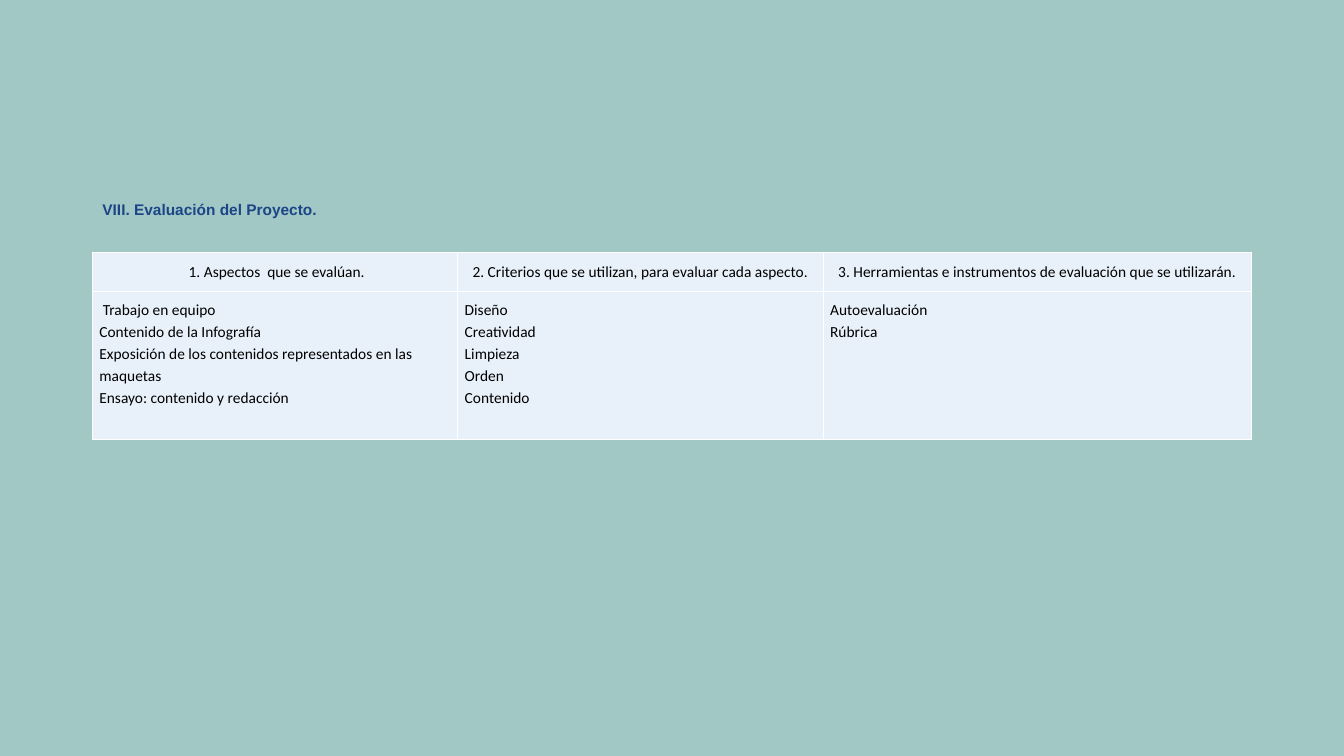
from pptx import Presentation
from pptx.dml.color import RGBColor
from pptx.enum.text import MSO_ANCHOR, PP_ALIGN
from pptx.oxml import parse_xml
from pptx.oxml.ns import nsdecls
from pptx.util import Pt


def color(value):
    return RGBColor.from_string(value)


def format_paragraph(paragraph, paragraph_format, font_format, font_color):
    for name, value in paragraph_format.items():
        setattr(paragraph, name, value)
    for name, value in font_format.items():
        setattr(paragraph.font, name, value)
    paragraph.font.color.rgb = color(font_color)


presentation = Presentation()
presentation.slide_width = Pt(960)
presentation.slide_height = Pt(540)
slide = presentation.slides.add_slide(presentation.slide_layouts[5])
slide.background.fill.solid()
slide.background.fill.fore_color.rgb = color("A1C8C5")

left, width = 66, 828
title = slide.shapes.title
title_box = {"left": Pt(left), "top": Pt(138), "width": Pt(width), "height": Pt(42.5)}
for name, value in title_box.items():
    setattr(title, name, value)
title_frame = title.text_frame
title_frame.text = "VIII. Evaluación del Proyecto."
title_frame.vertical_anchor = MSO_ANCHOR.TOP
title_frame.margin_top = Pt(5)
format_paragraph(
    title_frame.paragraphs[0],
    {"alignment": PP_ALIGN.LEFT},
    {"name": "Arial", "size": Pt(11), "bold": True},
    "1C4587",
)

columns = [
    (261, " 1. Aspectos  que se evalúan.", [
        " Trabajo en equipo",
        "Contenido de la Infografía",
        "Exposición de los contenidos representados en las maquetas",
        "Ensayo: contenido y redacción",
    ]),
    (261, "2. Criterios que se utilizan, para evaluar cada aspecto.", [
        "Diseño", "Creatividad", "Limpieza", "Orden", "Contenido",
    ]),
    (306, "3. Herramientas e instrumentos de evaluación que se utilizarán.", [
        "Autoevaluación", "Rúbrica",
    ]),
]
row_heights = [27.5, 106]
table_shape = slide.shapes.add_table(
    len(row_heights), len(columns), Pt(left), Pt(180.5), Pt(width), Pt(sum(row_heights))
)
table = table_shape.table
for row, height in zip(table.rows, row_heights):
    row.height = Pt(height)

cell_margins = {f"margin_{side}": Pt(5) for side in ("left", "right", "top", "bottom")}
for column_index, (column_width, heading, items) in enumerate(columns):
    table.columns[column_index].width = Pt(column_width)
    contents = [([heading], PP_ALIGN.CENTER), (items, PP_ALIGN.LEFT)]
    for row_index, (lines, alignment) in enumerate(contents):
        cell = table.cell(row_index, column_index)
        for name, value in cell_margins.items():
            setattr(cell, name, value)
        cell.text = "\n".join(lines)
        for paragraph in cell.text_frame.paragraphs:
            format_paragraph(
                paragraph,
                {"alignment": alignment, "line_spacing": 1.15},
                {"name": "Calibri", "size": Pt(11), "bold": False},
                "000000",
            )
        properties = cell._tc.get_or_add_tcPr()
        for edge in ("lnL", "lnR", "lnT", "lnB"):
            properties.append(parse_xml(
                f'<a:{edge} {nsdecls("a")} w="{Pt(1)}"><a:solidFill>'
                f'<a:srgbClr val="FFFFFF"/></a:solidFill></a:{edge}>'
            ))
        cell.fill.solid()
        cell.fill.fore_color.rgb = color("E8F1FA")

presentation.save("out.pptx")
